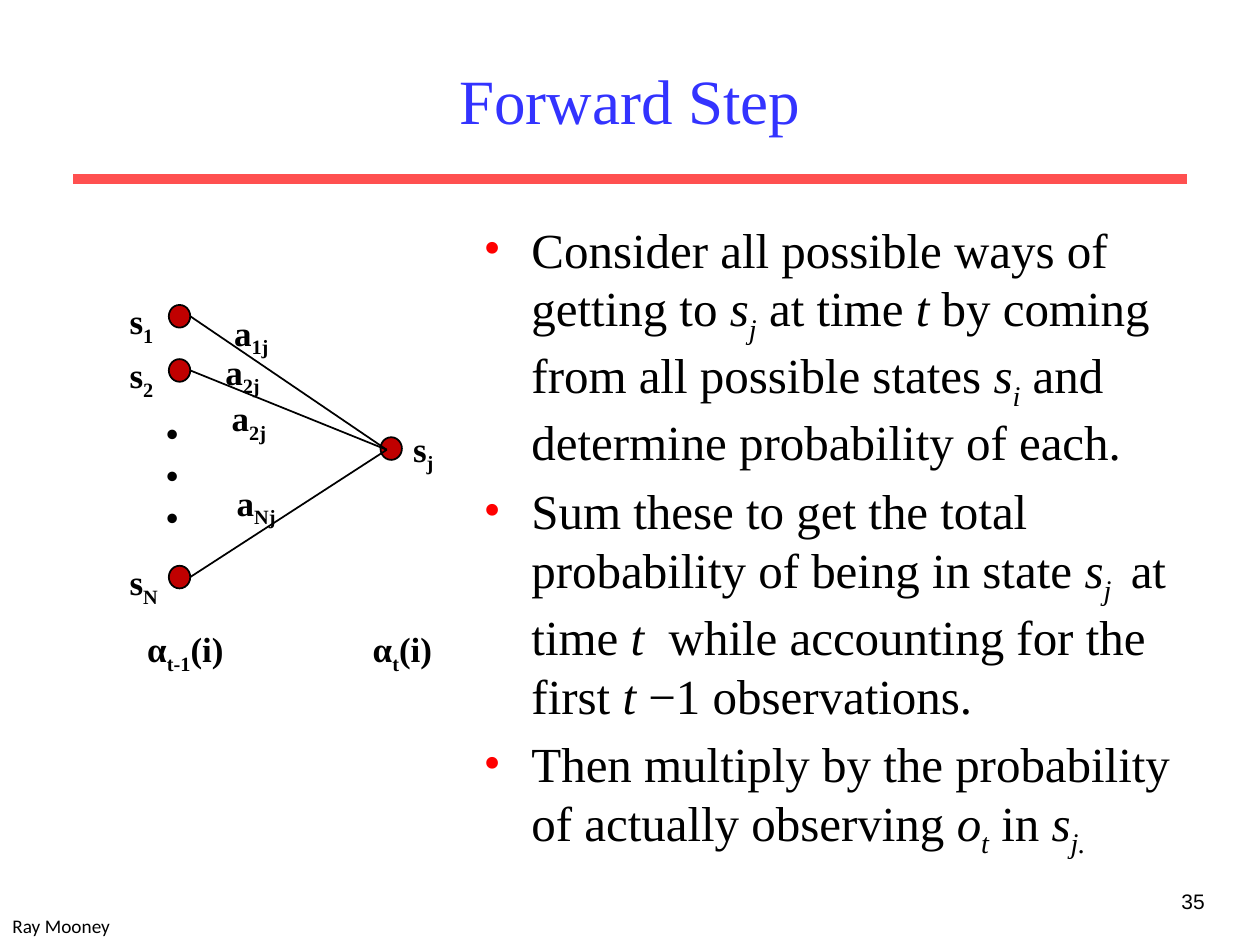
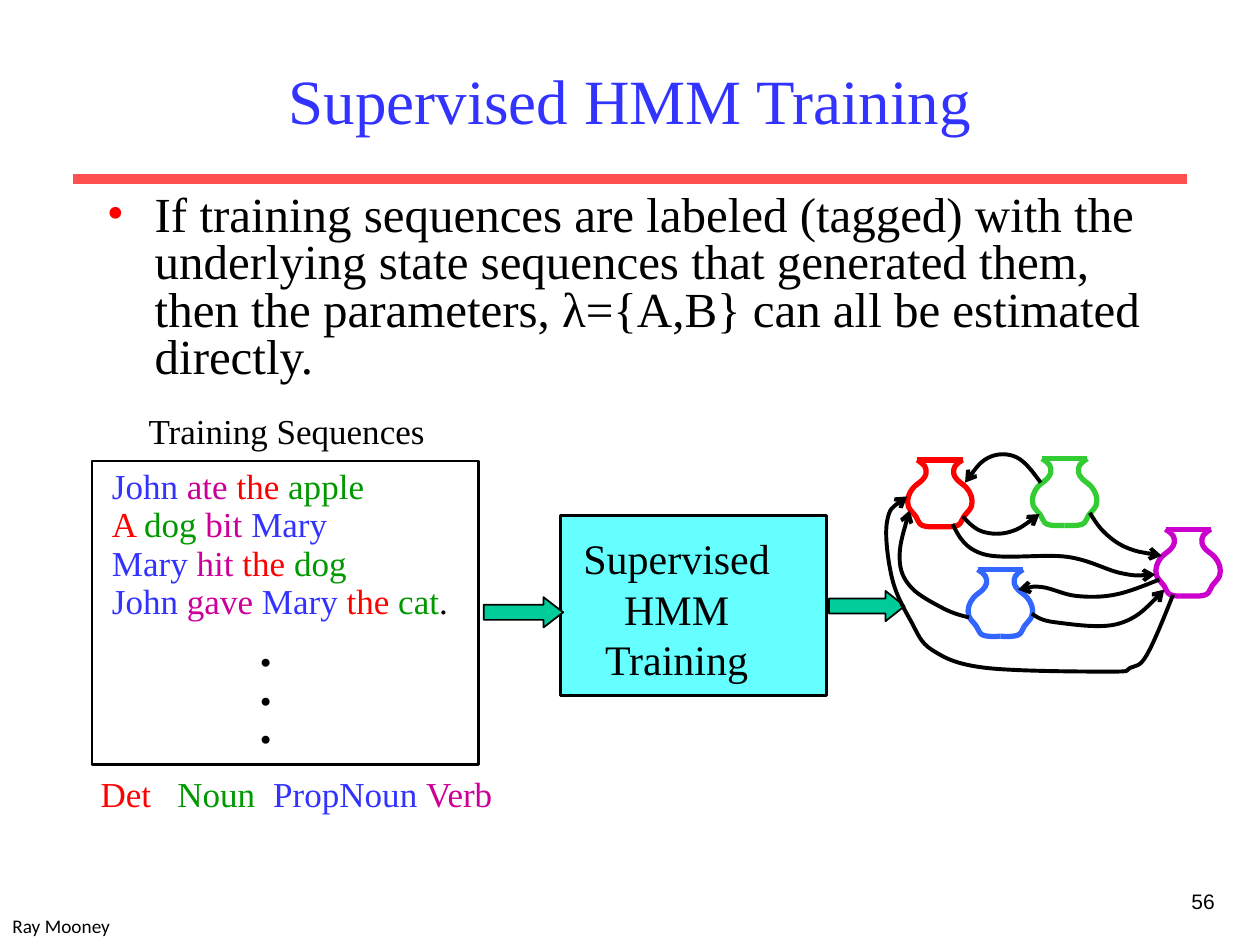
from dataclasses import dataclass

from lxml import etree
from pptx import Presentation
from pptx import util as u
from pptx.dml.color import RGBColor
from pptx.enum import shapes, text
from pptx.oxml.ns import qn

PX = 9144  # EMU per px, 100 px to the inch
SLIDE_SIZE = (1000, 750)


@dataclass(frozen=True)
class Theme:
    serif: str = "Times New Roman"
    sans: str = "Arial"
    credit_font: str = "Calibri"
    title_size: int = 36
    body_size: int = 28
    box_size: int = 24
    label_size: int = 20
    number_size: int = 12
    credit_size: int = 11
    ink: str = "000000"
    title: str = "3333FF"
    rule: str = "FF5050"
    bullet: str = "FF0000"
    state: str = "C00000"
    box: str = "66FFFF"
    arrow: str = "00CC99"


THEME = Theme()
TAGS = {"Det": "FF0000", "Noun": "009900", "PropNoun": "3333FF", "Verb": "CC0099"}
LEFT, CENTER, RIGHT = text.PP_ALIGN.LEFT, text.PP_ALIGN.CENTER, text.PP_ALIGN.RIGHT

# ---- Content. A span is plain text or (text, style); a style is a tag name,
# or "i" for italic and "_" for subscript.
CREDIT = "Ray Mooney"

FORWARD = {
    "title": "Forward Step",
    "number": ("35", 758),
    "bullets": [
        ["Consider all possible ways of getting to ", ("s", "i"), ("j", "i_"),
         " at time ", ("t", "i"), " by coming from all possible states ",
         ("s", "i"), ("i", "i_"), " and determine probability of each."],
        ["Sum these to get the total probability of being in state ",
         ("s", "i"), ("j ", "i_"), " at time ", ("t ", "i"),
         " while accounting for the first ", ("t", "i"), " −1 observations."],
        ["Then multiply by the probability of actually observing ",
         ("o", "i"), ("t", "i_"), " in ", ("s", "i"), ("j.", "i_")],
    ],
}
SOURCE_STATES = [("1", 242, 40), ("2", 285, 40), ("N", 449, 45)]  # subscript, top, label width
TARGET_STATE = (302, 347)
STATE_SIZE = (17, 18)
MEETING_POINT = (307, 357)
TRELLIS_LABELS = [  # left, top, width, spans
    (318, 334, 37, ["s", ("j", "_")]),
    (107, 493, 86, ["α", ("t-1", "_"), "(i)"]),
    (286, 493, 70, ["α", ("t", "_"), "(i)"]),
    (176, 242, 50, ["a", ("1j", "_")]),
    (169, 273, 50, ["a", ("2j", "_")]),
    (178, 377, 54, ["a", ("Nj", "_")]),
    (174, 310, 50, ["a", ("2j", "_")]),
]

TRAINING = {
    "title": "Supervised HMM Training",
    "number": ("56", 766),
    "bullets": [["If training sequences are labeled (tagged) with the underlying "
                 "state sequences that generated them, then the parameters, "
                 "λ={A,B} can all be estimated directly."]],
}
SENTENCES = [
    [("John ", "PropNoun"), ("ate ", "Verb"), ("the ", "Det"), ("apple", "Noun")],
    [("A ", "Det"), ("dog ", "Noun"), ("bit ", "Verb"), ("Mary", "PropNoun")],
    [("Mary", "PropNoun"), (" hit ", "Verb"), ("the ", "Det"), ("dog", "Noun")],
    [("John ", "PropNoun"), ("gave ", "Verb"), ("Mary ", "PropNoun"),
     ("the ", "Det"), ("cat", "Noun"), "."],
]
LEGEND = [("Det\t", "Det"), ("Noun\t", "Noun"), ("PropNoun ", "PropNoun"),
          ("Verb", "Verb")]
LEGEND_TABS = [61, 137]
FLOW_ARROWS = [((384, 474, 63, 24), 0.65), ((658, 469, 60, 24), 0.63)]

# Left half of an urn, from the rim down to the middle of its base
URN_SIDE = [(8, 0), (14, 5), (15, 11), (12, 16), (5, 22), (1, 29), (1, 37),
            (7, 45), (12, 52), (26, 53)]
URN_WIDTH = 52
URNS = [(768, 452, "3366FF"), (819, 364, "33CC33"),
        (720, 365, "FF0000"), (917, 420, "CC00CC")]
TRANSITIONS = [  # points that each curved arrow passes through
    [(764, 410), (780, 422), (802, 422), (825, 408)],
    [(865, 407), (877, 423), (895, 435), (922, 441)],
    [(826, 383), (807, 363), (785, 363), (766, 383)],
    [(756, 416), (781, 440), (847, 442), (890, 455), (917, 456)],
    [(819, 487), (838, 494), (888, 495), (924, 468)],
    [(769, 490), (749, 483), (723, 466), (714, 443), (722, 405)],
    [(931, 472), (910, 520), (897, 530), (881, 533), (782, 530), (740, 516),
     (723, 493), (708, 459), (704, 414), (720, 394)],
    [(920, 460), (885, 472), (854, 473), (827, 466), (808, 468)],
]


# ---- Drawing helpers
def emu(*lengths):
    return [u.Emu(round(length * PX)) for length in lengths]


def rgb(color):
    return RGBColor.from_string(color)


def set_line(shape, color, width):
    shape.line.color.rgb = rgb(color)
    shape.line.width = u.Pt(width)


def add_bullet(para):
    props = para._p.get_or_add_pPr()
    props.set("marL", str(38 * PX))
    props.set("indent", str(-38 * PX))
    color = etree.SubElement(props, qn("a:buClr"))
    etree.SubElement(color, qn("a:srgbClr"), val=THEME.bullet)
    etree.SubElement(props, qn("a:buFont"), typeface=THEME.serif)
    etree.SubElement(props, qn("a:buChar"), char="•")


def add_tabs(para, stops):
    tabs = etree.SubElement(para._p.get_or_add_pPr(), qn("a:tabLst"))
    for stop in stops:
        etree.SubElement(tabs, qn("a:tab"), pos=str(stop * PX), algn="l")


def add_span(para, content):
    words, style = (content, "") if isinstance(content, str) else content
    span = para.add_run()
    span.text = words
    if style in TAGS:
        span.font.color.rgb = rgb(TAGS[style])
        return
    if "i" in style:
        span.font.italic = True
    if "_" in style:
        span._r.get_or_add_rPr().set("baseline", "-25000")


def add_text(page, at, paras, size, font=THEME.serif, color=THEME.ink, bold=False,
             align=LEFT, wrap=False, middle=False, bullets=False, tabs=(),
             spacing=None, before=None):
    box = page.shapes.add_textbox(*emu(*at))
    frame = box.text_frame
    frame.word_wrap = wrap
    if not wrap:
        frame.auto_size = text.MSO_AUTO_SIZE.SHAPE_TO_FIT_TEXT
    if middle:
        frame.vertical_anchor = text.MSO_ANCHOR.MIDDLE
    for index, spans in enumerate(paras):
        para = frame.add_paragraph() if index else frame.paragraphs[0]
        if bullets:
            add_bullet(para)
        if tabs:
            add_tabs(para, tabs)
        para.alignment = align
        if spacing:
            para.line_spacing = spacing
        if before:
            para.space_before = u.Pt(before)
        para.font.name = font
        para.font.size = u.Pt(size)
        para.font.bold = bold
        para.font.color.rgb = rgb(color)
        for content in spans:
            add_span(para, content)


def add_preset(page, kind, at, fill=None, width=1.0):
    shape = page.shapes.add_shape(kind, *emu(*at))
    shape.shadow.inherit = False
    if fill:
        shape.fill.solid()
        shape.fill.fore_color.rgb = rgb(fill)
    else:
        shape.fill.background()
    set_line(shape, THEME.ink, width)
    return shape


def add_line(page, start, end, color=THEME.ink, width=1.0):
    line = page.shapes.add_connector(shapes.MSO_CONNECTOR.STRAIGHT, *emu(*start, *end))
    set_line(line, color, width)
    etree.SubElement(line._element.spPr, qn("a:effectLst"))


def spline_points(knots):
    """Two handles and an end for each piece; slopes follow the neighbouring knots."""
    def handle(index, sign):
        return tuple(k + sign * (after - ahead) / 6 for k, ahead, after
                     in zip(knots[index], knots[index - 1], knots[index + 1]))

    def halfway(a, b):
        return tuple((p + q) / 2 for p, q in zip(a, b))

    points = []
    last = len(knots) - 2
    for i in range(last + 1):
        start, end = knots[i], knots[i + 1]
        into = handle(i + 1, -1) if i < last else None
        out = handle(i, 1) if i else halfway(start, into)
        points += [out, into or halfway(out, end), end]
    return points


def add_curve(page, knots, color, width, arrow=False):
    builder = page.shapes.build_freeform(*emu(*knots[0]))
    builder.add_line_segments([emu(*point) for point in spline_points(knots)], close=False)
    curve = builder.convert_to_shape()
    # Every three straight segments become one Bézier piece
    outline = curve._element.spPr.find(".//" + qn("a:path"))
    segments = outline.findall(qn("a:lnTo"))
    for i in range(0, len(segments), 3):
        piece = etree.SubElement(outline, qn("a:cubicBezTo"))
        for segment in segments[i:i + 3]:
            piece.append(segment[0])
            outline.remove(segment)
    curve.shadow.inherit = False
    curve.fill.background()
    set_line(curve, color, width)
    if arrow:
        etree.SubElement(curve.line._get_or_add_ln(), qn("a:tailEnd"), type="arrow")


def add_urn(page, left, top, color):
    side = [(left + x, top + y) for x, y in URN_SIDE]
    mirrored = [(2 * left + URN_WIDTH - x, y) for x, y in side]
    for half in (side, mirrored):
        add_curve(page, half, color, 3)
    add_line(page, side[0], mirrored[0], color, 3)


# ---- Slides
def add_page(deck, content, body_at, spacing=None):
    page = deck.slides.add_slide(deck.slide_layouts[6])
    add_line(page, (58, 142), (942, 142), THEME.rule, 6)
    add_text(page, (75, 25, 850, 108), [[content["title"]]], THEME.title_size,
             color=THEME.title, align=CENTER, wrap=True, middle=True)
    number, left = content["number"]
    add_text(page, (left, 700, 208, 50), [[number]], THEME.number_size,
             font=THEME.sans, align=RIGHT, wrap=True)
    add_text(page, body_at, content["bullets"], THEME.body_size, wrap=True,
             bullets=True, spacing=spacing, before=5.6)
    add_text(page, (0, 721, 99, 29), [[CREDIT]], THEME.credit_size,
             font=THEME.credit_font)
    return page


def build_forward(deck):
    page = add_page(deck, FORWARD, (374, 169, 580, 526))
    oval = shapes.MSO_SHAPE.OVAL
    width, height = STATE_SIZE
    # States and the transitions into the target state
    add_preset(page, oval, (*TARGET_STATE, width, height), THEME.state)
    for subscript, top, label_width in SOURCE_STATES:
        add_preset(page, oval, (134, top, width, height), THEME.state)
        add_text(page, (93, top - 9, label_width, 44), [["s", (subscript, "_")]],
                 THEME.label_size, bold=True)
        add_line(page, (134 + width, top + height // 2), MEETING_POINT)
    add_text(page, (122, 322, 33, 111), [["•"]] * 3, THEME.label_size, bold=True)
    for left, top, label_width, spans in TRELLIS_LABELS:
        add_text(page, (left, top, label_width, 44), [spans], THEME.label_size, bold=True)


def build_training(deck):
    page = add_page(deck, TRAINING, (75, 150, 850, 201), spacing=0.8)
    preset = shapes.MSO_SHAPE
    # Training step
    add_preset(page, preset.RECTANGLE, (445, 409, 211, 143), THEME.box, 1.5)
    add_text(page, (453, 418, 168, 130), [["Supervised"], ["HMM"], ["Training"]],
             THEME.box_size, align=CENTER)
    for at, head in FLOW_ARROWS:
        arrow = add_preset(page, preset.RIGHT_ARROW, at, THEME.arrow)
        arrow.adjustments[1] = head
    # Trained model
    for urn in URNS:
        add_urn(page, *urn)
    for knots in TRANSITIONS:
        add_curve(page, knots, THEME.ink, 2.25, arrow=True)
    # Tagged sentences
    add_text(page, (79, 378, 305, 277), SENTENCES, THEME.label_size, wrap=True,
             spacing=0.5, before=10)
    add_text(page, (196, 500, 30, 101), [["."]] * 3, THEME.body_size, bold=True,
             align=CENTER, spacing=0.65)
    add_preset(page, preset.RECTANGLE, (73, 366, 307, 241), width=1.5)
    add_text(page, (108, 320, 239, 43), [["Training Sequences"]], THEME.label_size,
             align=CENTER)
    add_text(page, (70, 608, 340, 43), [LEGEND], THEME.label_size, wrap=True,
             tabs=LEGEND_TABS)


def main():
    deck = Presentation()
    deck.slide_width, deck.slide_height = emu(*SLIDE_SIZE)
    build_forward(deck)
    build_training(deck)
    deck.save("out.pptx")


if __name__ == "__main__":
    main()
